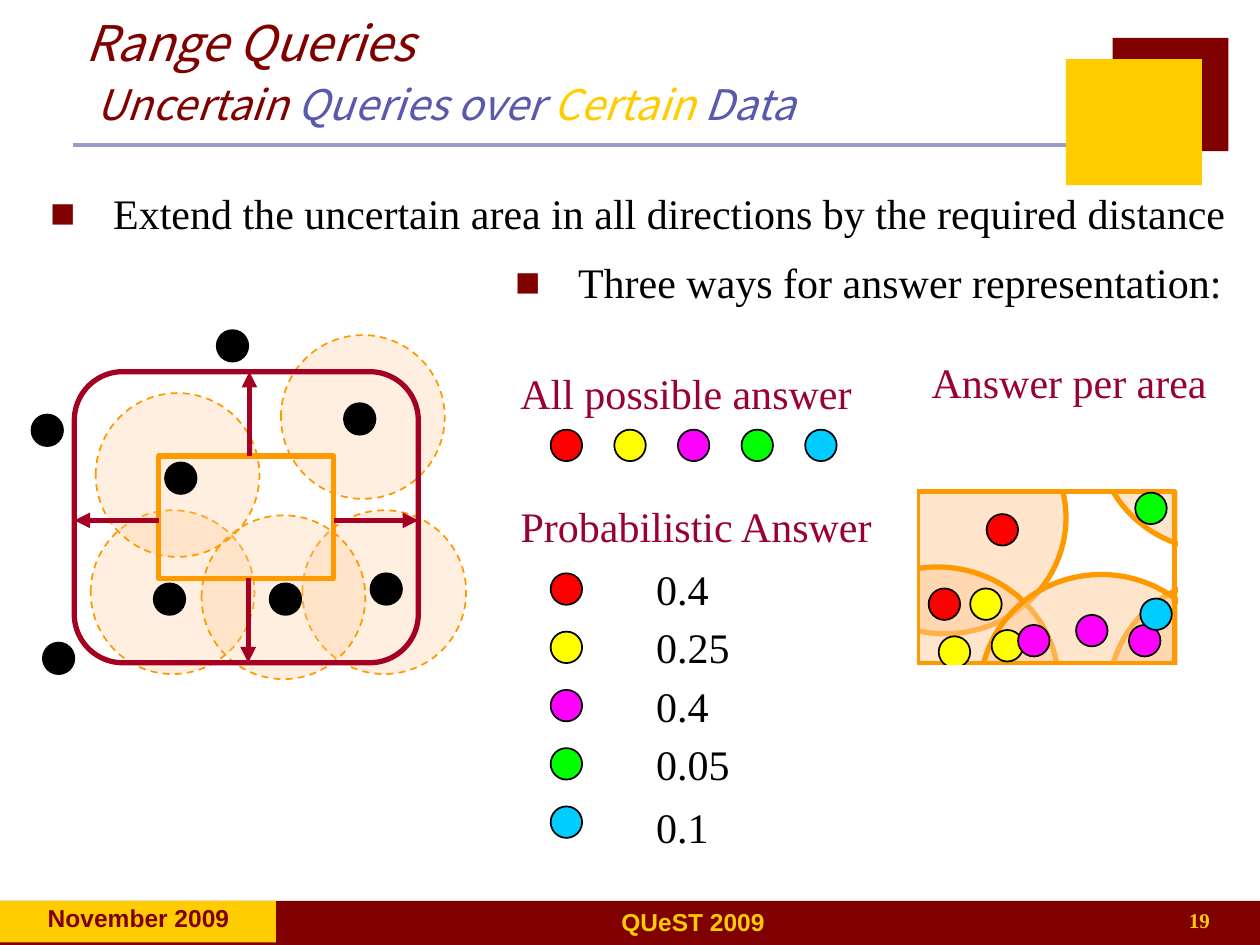
import dataclasses
import typing

import lxml.etree
import pptx
import pptx.dml.fill
import pptx.enum.dml
import pptx.enum.shapes
import pptx.enum.text
import pptx.oxml.ns
import pptx.slide
import pptx.util

SHAPES = pptx.enum.shapes.MSO_SHAPE
ALIGN = pptx.enum.text.PP_ALIGN
SERIF = "Times New Roman"
MAROON, GOLD, CRIMSON, ORANGE = "800000", "FFCC00", "A50021", "FF9900"
PEACH, WHITE, BLACK, VIOLET, PLUM = "FFCC99", "FFFFFF", "000000", "5959AD", "990033"
RED, YELLOW, MAGENTA, GREEN, BLUE = "FF0000", "FFFF00", "FF00FF", "00FF00", "00CCFF"
DOT = 0.25


@dataclasses.dataclass
class Box:
    left: float
    top: float
    width: float
    height: float
    fill: str | None = None
    line: str | None = None
    weight: float = 3
    kind: int = SHAPES.RECTANGLE
    opacity: int = 100
    dashed: bool = False


@dataclasses.dataclass
class Label:
    text: str
    left: float
    top: float
    width: float
    height: float
    color: str = BLACK
    size: float = 24
    font: str = SERIF
    bold: bool = False
    align: int = ALIGN.CENTER
    bullet: bool = False


@dataclasses.dataclass
class Answer:
    color: str
    probability: str
    text_top: float


def inches(value: float) -> pptx.util.Length:
    return pptx.util.Cm(value * 2.54)


def add_xml(parent: typing.Any, tag: str, **attributes: str) -> typing.Any:
    return lxml.etree.SubElement(parent, pptx.oxml.ns.qn(tag), attributes)


def set_values(target: typing.Any, values: dict[str, typing.Any]) -> None:
    for name, value in values.items():
        setattr(target, name, value)


def paint(fill: pptx.dml.fill.FillFormat, color: str | None) -> None:
    if color is None:
        fill.background()
    else:
        fill.solid()
        fill.fore_color.rgb = pptx.dml.color.RGBColor.from_string(color)


def format_run(run: typing.Any, color: str, **values: typing.Any) -> None:
    set_values(run.font, values)
    paint(run.font.fill, color)


def draw_box(slide: pptx.slide.Slide, box: Box) -> None:
    bounds = map(inches, (box.left, box.top, box.width, box.height))
    shape = slide.shapes.add_shape(box.kind, *bounds)
    shape.shadow.inherit = False
    paint(shape.fill, box.fill)
    paint(shape.line.fill, box.line)
    if box.line:
        shape.line.width = pptx.util.Pt(box.weight)
    if box.dashed:
        shape.line.dash_style = pptx.enum.dml.MSO_LINE.DASH
    if box.opacity < 100:
        color = shape.fill._xPr.find(".//" + pptx.oxml.ns.qn("a:srgbClr"))
        add_xml(color, "a:alpha", val=str(box.opacity * 1000))


def draw_dot(slide: pptx.slide.Slide, left: float, top: float, color: str) -> None:
    draw_box(slide, Box(left, top, DOT, DOT, color, BLACK, 1, SHAPES.OVAL))


def draw_label(slide: pptx.slide.Slide, label: Label) -> None:
    bounds = map(inches, (label.left, label.top, label.width, label.height))
    frame = slide.shapes.add_textbox(*bounds).text_frame
    frame.word_wrap = True
    paragraph = frame.paragraphs[0]
    paragraph.alignment = label.align
    if label.bullet:
        properties = paragraph._p.get_or_add_pPr()
        set_values(properties, {"marL": inches(0.5), "indent": inches(-0.5)})
        properties.set("marL", str(inches(0.5)))
        properties.set("indent", str(inches(-0.5)))
        add_xml(add_xml(properties, "a:buClr"), "a:srgbClr", val=MAROON)
        add_xml(properties, "a:buFont", typeface="Arial")
        add_xml(properties, "a:buChar", char="■")
    run = paragraph.add_run()
    run.text = label.text
    format_run(run, label.color, name=label.font, size=pptx.util.Pt(label.size), bold=label.bold)


def draw_line(slide: pptx.slide.Slide, points: tuple[float, ...], color: str,
              weight: float, arrow: bool = False) -> None:
    straight = pptx.enum.shapes.MSO_CONNECTOR.STRAIGHT
    connector = slide.shapes.add_connector(straight, *map(inches, points))
    paint(connector.line.fill, color)
    connector.line.width = pptx.util.Pt(weight)
    if arrow:
        add_xml(connector.line._get_or_add_ln(), "a:tailEnd", type="triangle")
    add_xml(connector._element.spPr, "a:effectLst")


def draw_frame(slide: pptx.slide.Slide) -> None:
    draw_line(slide, (0.58, 1.15, 8.5, 1.15), "9999CC", 2.25)
    for box in (Box(0, 7.15, 10, 0.35, MAROON), Box(0, 7.15, 2.19, 0.33, GOLD),
                Box(8.83, 0.3, 0.92, 0.9, MAROON), Box(8.46, 0.47, 1.08, 1, GOLD)):
        draw_box(slide, box)
    draw_label(slide, Label("QUeST 2009", 1.89, 7.15, 7.22, 0.33, GOLD, 14, "Arial", True))
    draw_label(slide, Label("November 2009", 0.12, 7.12, 1.96, 0.33, MAROON, 14, "Arial", True))
    draw_label(slide, Label("19", 7.62, 7.15, 2.08, 0.33, GOLD, 12, SERIF, True, ALIGN.RIGHT))


def write_title(slide: pptx.slide.Slide) -> None:
    title = slide.shapes.title
    set_values(title, {"left": inches(0.58), "top": inches(0.06),
                       "width": inches(7.67), "height": inches(1.01)})
    set_values(title.text_frame, {"vertical_anchor": pptx.enum.text.MSO_ANCHOR.MIDDLE,
                                  "auto_size": pptx.enum.text.MSO_AUTO_SIZE.NONE,
                                  "word_wrap": True})
    paragraph = title.text_frame.paragraphs[0]
    paragraph.alignment = ALIGN.LEFT
    for text, color, size in (("Range Queries\v ", MAROON, 28), ("Uncertain ", MAROON, 24),
                              ("Queries over ", VIOLET, 24), ("Certain", GOLD, 24),
                              (" Data", VIOLET, 24)):
        for index, part in enumerate(text.split("\v")):
            if index:
                paragraph.add_line_break()
            run = paragraph.add_run()
            run.text = part
            format_run(run, color, name="Noto Sans CJK KR", size=pptx.util.Pt(size), italic=True)


def draw_query(slide: pptx.slide.Slide) -> None:
    for left, top in ((2.23, 2.66), (0.72, 4.05), (2.4, 4.05), (1.6, 4.09), (0.76, 3.12)):
        draw_box(slide, Box(left, top, 1.3, 1.3, PEACH, ORANGE, 1, SHAPES.OVAL, 30, True))
    draw_box(slide, Box(1.26, 3.62, 1.39, 0.97, None, ORANGE))
    for left, top in ((0.25, 3.29), (2.73, 3.2), (1.72, 2.62), (2.94, 4.55),
                      (2.14, 4.63), (1.31, 3.67), (0.34, 5.1), (1.22, 4.63)):
        draw_dot(slide, left, top, BLACK)
    for points in ((2.65, 4.13, 3.32, 4.13), (1.26, 4.13, 0.59, 4.13),
                   (1.97, 4.59, 1.97, 5.26), (1.98, 3.62, 1.98, 2.95)):
        draw_line(slide, points, CRIMSON, 3, True)
    draw_box(slide, Box(0.59, 2.95, 2.73, 2.31, None, CRIMSON, 3, SHAPES.ROUNDED_RECTANGLE))


def draw_areas(slide: pptx.slide.Slide) -> None:
    def regions(*corners: tuple[float, float]) -> None:
        for left, top in corners:
            draw_box(slide, Box(left, top, 1.92, 1.84, PEACH, ORANGE, 3, SHAPES.OVAL, 50))

    def masks(*bounds: tuple[float, float, float, float]) -> None:
        for bound in bounds:
            draw_box(slide, Box(*bound, WHITE, WHITE))

    regions((6.54, 3.19), (8.71, 2.53))
    masks((6.47, 2.41, 3.53, 1.46))
    draw_label(slide, Label("Answer per area", 6.95, 2.78, 3.07, 0.63, PLUM))
    regions((6.48, 4.5), (8.8, 4.59), (7.78, 4.56))
    draw_box(slide, Box(7.28, 3.9, 2.04, 1.37, None, ORANGE))
    for left, top, color in ((7.37, 4.67, RED), (7.7, 4.67, YELLOW), (8.96, 4.96, MAGENTA),
                             (9.01, 3.91, GREEN), (7.83, 4.08, RED), (7.45, 5.05, YELLOW),
                             (7.87, 5, YELLOW), (8.08, 4.96, MAGENTA), (8.54, 4.88, MAGENTA),
                             (9.05, 4.75, BLUE)):
        draw_dot(slide, left, top, color)
    masks((6.47, 5.3, 3.53, 1.39), (9.37, 3.46, 0.63, 2.02), (6.26, 3.62, 1, 2.02))


def draw_answers(slide: pptx.slide.Slide) -> None:
    answers = (Answer(RED, "0.4", 4.42), Answer(YELLOW, "0.25", 4.88),
               Answer(MAGENTA, "0.4", 5.35), Answer(GREEN, "0.05", 5.81),
               Answer(BLUE, "0.1", 6.31))
    draw_label(slide, Label("Probabilistic Answer", 3.99, 3.92, 3.07, 0.63, PLUM))
    draw_label(slide, Label("All possible answer", 3.91, 2.87, 3.07, 0.63, PLUM))
    for index, answer in enumerate(answers):
        draw_dot(slide, 4.37 + index * 0.505, 3.41, answer.color)
        draw_dot(slide, 4.37, 4.55 + index * 0.4625, answer.color)
        draw_label(slide, Label(answer.probability, 5.11, answer.text_top, 1.1, 0.5,
                                align=ALIGN.LEFT))


def main() -> None:
    presentation = pptx.Presentation()
    set_values(presentation, {"slide_width": inches(10), "slide_height": inches(7.5)})
    slide = presentation.slides.add_slide(presentation.slide_layouts[5])
    draw_frame(slide)
    write_title(slide)
    draw_query(slide)
    draw_areas(slide)
    draw_answers(slide)
    for text, bounds in (
        ("Extend the uncertain area in all directions by the required distance",
         (0.3, 1.44, 9.58, 0.67)),
        ("Three ways for answer representation:", (3.99, 1.99, 5.96, 0.8)),
    ):
        draw_label(slide, Label(text, *bounds, align=ALIGN.LEFT, bullet=True))
    presentation.save("out.pptx")


if __name__ == "__main__":
    main()
